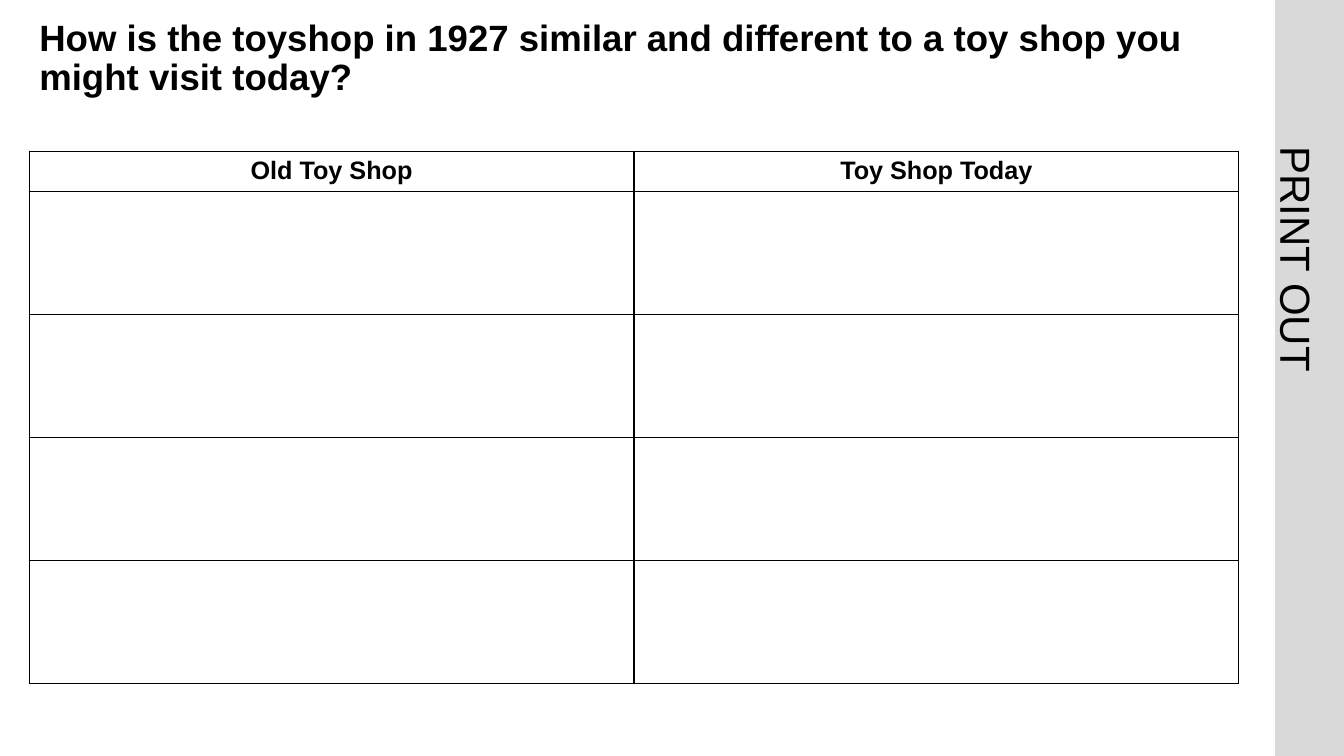
from lxml import etree
from pptx import Presentation
from pptx import util as u
from pptx.dml.color import RGBColor
from pptx.enum import shapes, text
from pptx.oxml.ns import qn

COLORS = {"ink": "000000", "paper": "FFFFFF", "strip": "D9D9D9"}
FONT = "Arial"
COLS, ROWS = 160, 90


class Worksheet:
    """Style and current slide; positions are columns and rows of a 160 x 90 grid."""

    def __init__(self, prs):
        self.prs = prs
        self.s = prs.slides.add_slide(prs.slide_layouts[5])
        fill = self.s.background.fill
        fill.solid()
        fill.fore_color.rgb = self.color("paper")

    def color(self, name):
        return RGBColor.from_string(COLORS[name])

    def x(self, cols):
        return round(self.prs.slide_width * cols / COLS)

    def y(self, rows):
        return round(self.prs.slide_height * rows / ROWS)

    def box(self, left, top, width, height):
        return self.x(left), self.y(top), self.x(width), self.y(height)

    def add_text(self, p, words, size, align, bold=False):
        p.alignment = align
        r = p.add_run()
        r.text = words
        r.font.name, r.font.size, r.font.bold = FONT, u.Pt(size), bold
        r.font.color.rgb = self.color("ink")

    def insets(self, tf, left, top, right, bottom):
        tf.margin_left, tf.margin_top = u.Inches(left), u.Inches(top)
        tf.margin_right, tf.margin_bottom = u.Inches(right), u.Inches(bottom)

    def strip(self, *place):
        sp = self.s.shapes.add_shape(shapes.MSO_SHAPE.RECTANGLE, *self.box(*place))
        sp.shadow.inherit = False
        sp.fill.solid()
        sp.fill.fore_color.rgb = self.color("strip")
        sp.line.fill.background()

    def side_label(self, words, *place):
        sp = self.s.shapes.add_textbox(*self.box(*place))
        sp.rotation = 90
        tf = sp.text_frame
        tf.word_wrap = True
        tf.auto_size = text.MSO_AUTO_SIZE.SHAPE_TO_FIT_TEXT
        self.insets(tf, 0, 0, 0, 0)
        p = tf.paragraphs[0]
        p.line_spacing = u.Pt(58.8)
        self.add_text(p, words, 30, text.PP_ALIGN.CENTER)

    def title(self, words, *place):
        sp = self.s.shapes.title
        sp.left, sp.top, sp.width, sp.height = self.box(*place)
        tf = sp.text_frame
        tf.word_wrap = True
        tf.auto_size = text.MSO_AUTO_SIZE.NONE
        tf.vertical_anchor = text.MSO_ANCHOR.MIDDLE
        # The deep bottom inset lifts the two lines above the box centre
        self.insets(tf, 0, 0.05, 0.1, 0.46)
        p = tf.paragraphs[0]
        p.line_spacing = 0.9
        p.space_before = u.Pt(0)
        self.add_text(p, words, 26.1, text.PP_ALIGN.LEFT, bold=True)

    def borders(self, cell):
        tc_pr = cell._tc.get_or_add_tcPr()
        for i, side in enumerate(("lnL", "lnR", "lnT", "lnB")):
            ln = etree.Element(qn(f"a:{side}"), w=str(u.Pt(1)))
            solid = etree.SubElement(ln, qn("a:solidFill"))
            etree.SubElement(solid, qn("a:srgbClr"), val=COLORS["ink"])
            tc_pr.insert(i, ln)

    def table(self, headings, left, top, width, header_rows, answer_rows, answers):
        height = header_rows + answers * answer_rows
        frame = self.s.shapes.add_table(answers + 1, len(headings),
                                        *self.box(left, top, width, height))
        table = frame.table
        for column in table.columns:
            column.width = self.x(width / len(headings))
        for i, row in enumerate(table.rows):
            row.height = self.y(answer_rows if i else header_rows)
        for cell in table.iter_cells():
            cell.fill.background()
            self.borders(cell)
        for i, heading in enumerate(headings):
            p = table.cell(0, i).text_frame.paragraphs[0]
            self.add_text(p, heading, 18, text.PP_ALIGN.CENTER, bold=True)


def main():
    prs = Presentation()
    prs.slide_width, prs.slide_height = u.Inches(13.33), u.Inches(7.5)
    sheet = Worksheet(prs)

    # Grey print-out strip on the right edge
    sheet.strip(151.8, 0, 8.2, ROWS)
    sheet.side_label("PRINT OUT", 132.84, 26.52, 48.12, 8.64)

    # Question
    sheet.title("How is the toyshop in 1927 similar and different to a toy shop "
                "you might visit today?", 4.68, 4.8, 144.36, 9.36)

    # Comparison table with room for four answers
    sheet.table(["Old Toy Shop", "Toy Shop Today"], left=3.48, top=18, width=144,
                header_rows=4.5, answer_rows=14.64, answers=4)

    prs.save("out.pptx")


if __name__ == "__main__":
    main()
